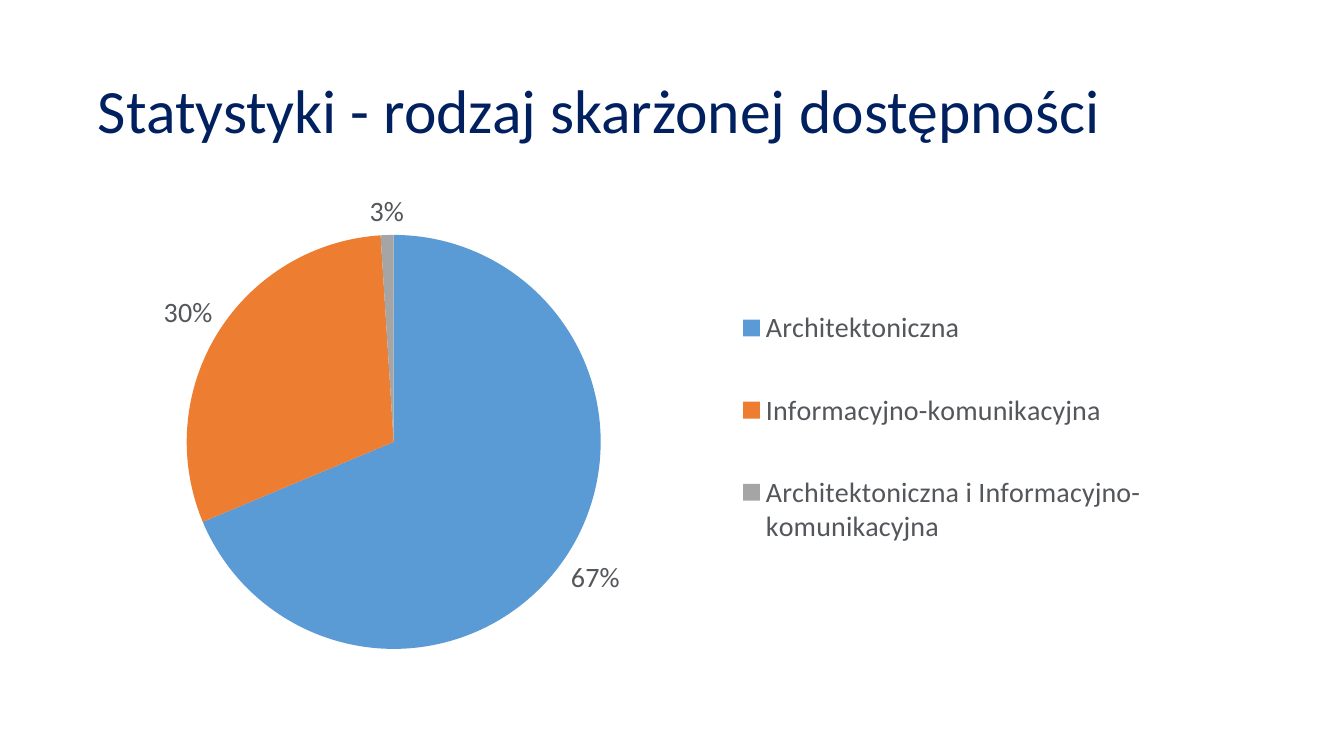
from lxml.etree import SubElement
from pptx import Presentation
from pptx.chart.data import CategoryChartData
from pptx.dml.color import RGBColor
from pptx.enum.chart import XL_CHART_TYPE, XL_LABEL_POSITION, XL_LEGEND_POSITION
from pptx.enum.text import MSO_ANCHOR, PP_ALIGN
from pptx.oxml.ns import qn
from pptx.util import Emu, Pt

NAVY = RGBColor(0x00, 0x20, 0x60)
GREY = RGBColor(0x53, 0x56, 0x5A)
BLUE = RGBColor(0x5B, 0x9B, 0xD5)
ORANGE = RGBColor(0xED, 0x7D, 0x31)
SILVER = RGBColor(0xA5, 0xA5, 0xA5)
FACE = "Calibri"
SCALE = 914400 / 100.8


def px(size):
    return Emu(round(size * SCALE))


def style(font, size, color):
    font.name = FACE
    font.size = Pt(size)
    font.bold = False
    font.color.rgb = color


deck = Presentation()
deck.slide_width, deck.slide_height = px(1344), px(756)
slide = deck.slides.add_slide(deck.slide_layouts[5])

# Title
title = slide.shapes.title
title.left, title.top, title.width, title.height = map(px, (93, 41, 1159, 146))
frame = title.text_frame
frame.word_wrap = True
frame.vertical_anchor = MSO_ANCHOR.MIDDLE
frame.margin_left = frame.margin_right = px(5)
frame.margin_top = frame.margin_bottom = px(5)
line = frame.paragraphs[0]
line.alignment = PP_ALIGN.LEFT
line.line_spacing = 0.9
run = line.add_run()
run.text = "Statystyki - rodzaj skarżonej dostępności"
style(run.font, 44, NAVY)

# Pie chart
data = CategoryChartData()
data.categories = [
    "Architektoniczna",
    "Informacyjno-komunikacyjna",
    "Architektoniczna i Informacyjno-komunikacyjna",
]
data.add_series("Series 1", (68, 30, 1))
area = map(px, (86, 186, 1119, 483))
chart = slide.shapes.add_chart(XL_CHART_TYPE.PIE, *area, data).chart
chart.has_title = False
style(chart.font, 10, GREY)
plot = chart.plots[0]
plot.vary_by_categories = True
pie = plot.series[0]
for spot, color in enumerate((BLUE, ORANGE, SILVER)):
    fill = pie.points[spot].format.fill
    fill.solid()
    fill.fore_color.rgb = color

# Data labels
labels = pie.data_labels
labels.show_percentage = True
labels.show_value = False
labels.number_format = "0%"
labels.number_format_is_linked = False
labels.position = XL_LABEL_POSITION.OUTSIDE_END
style(labels.font, 20, GREY)
for spot, text in ((0, "67%"), (2, "3%")):
    label = pie.points[spot].data_label
    run = label.text_frame.paragraphs[0].add_run()
    run.text = text
    style(run.font, 20, GREY)
    label.position = XL_LABEL_POSITION.OUTSIDE_END

# Legend
chart.has_legend = True
legend = chart.legend
legend.position = XL_LEGEND_POSITION.RIGHT
legend.include_layout = False
style(legend.font, 20, GREY)

# Places of the pie and the legend, as shares of the chart
root = chart.element
for name, index, inner, box in (
    ("c:plotArea", 0, True, (0.09, 0.1, 0.37, 0.86)),
    ("c:legend", 1, False, (0.58, 0.16, 0.37, 0.68)),
):
    part = next(root.iter(qn(name)))
    for old in part.findall(qn("c:layout")):
        part.remove(old)
    layout = SubElement(part, qn("c:layout"))
    part.insert(index, layout)
    manual = SubElement(layout, qn("c:manualLayout"))
    if inner:
        SubElement(manual, qn("c:layoutTarget"), val="inner")
    for mode in ("xMode", "yMode"):
        SubElement(manual, qn("c:" + mode), val="edge")
    for side, share in zip("xywh", box):
        SubElement(manual, qn("c:" + side), val=str(share))

deck.save("out.pptx")
